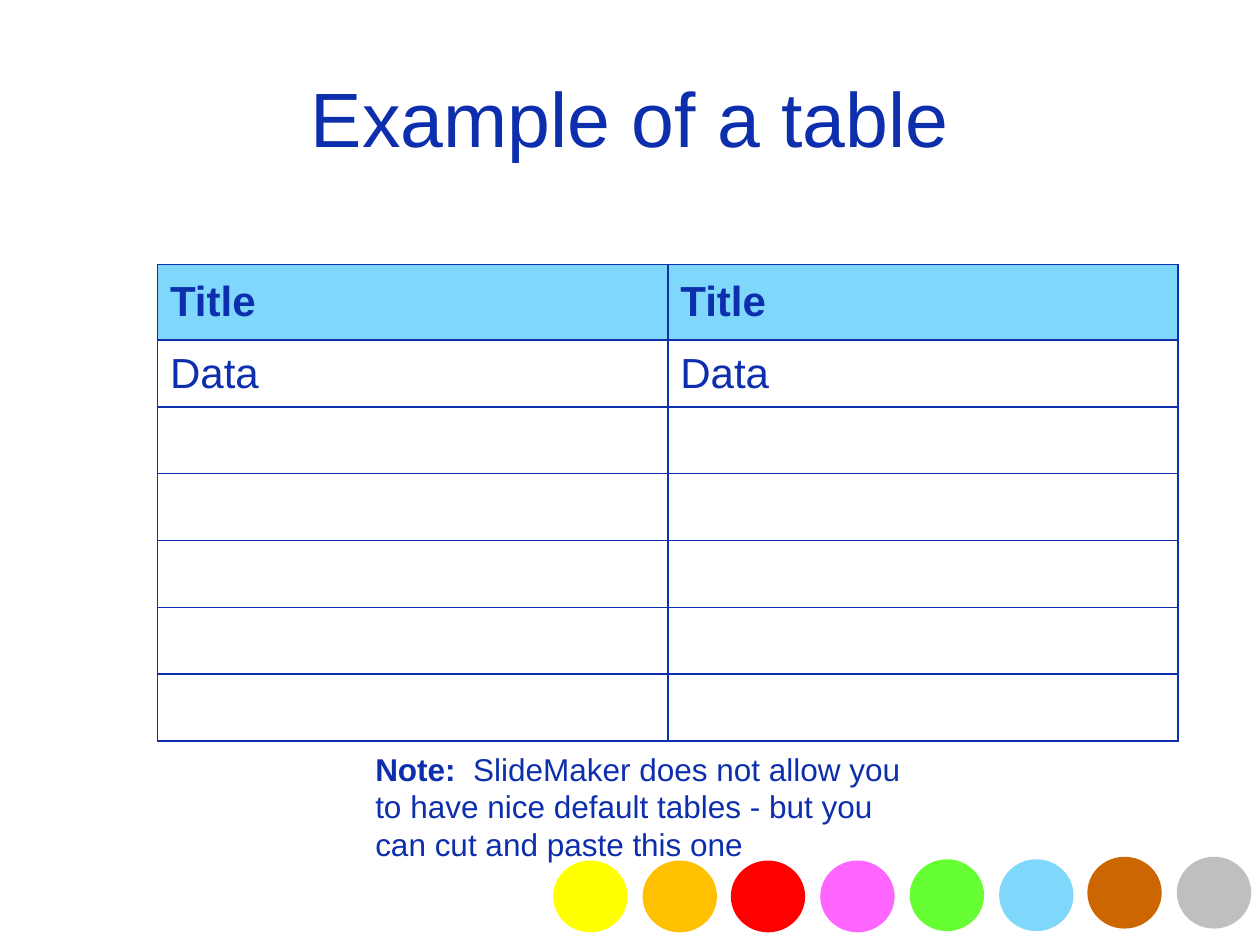
from dataclasses import dataclass

import pptx
import pptx.dml.color
import pptx.enum.shapes
import pptx.enum.text
import pptx.oxml
import pptx.oxml.ns
import pptx.util

PX = 9144
FONT = "Arial"
NAVY = "0E2FAD"
SKY = "7FD7FC"
DOT_LEFT, DOT_PITCH = 439, 70.7
ROW_HEIGHTS = [60] + [53] * 6
COLUMN_WIDTHS = [405, 405]
ROW_TEXTS = ["Title", "Data"]


@dataclass
class Box:
    left: int
    top: int
    width: int
    height: int

    def emu(self) -> list[int]:
        return [side * PX for side in (self.left, self.top, self.width, self.height)]


@dataclass
class Dot:
    color: str
    top: int


DOTS = [
    Dot("FFFF00", 683),
    Dot("FFC000", 683),
    Dot("FF0000", 683),
    Dot("FF66FF", 683),
    Dot("66FF33", 682),
    Dot(SKY, 682),
    Dot("CC6600", 680),
    Dot("BFBFBF", 680),
]


def rgb(color: str) -> pptx.dml.color.RGBColor:
    return pptx.dml.color.RGBColor.from_string(color)


def set_font(font, size: int) -> None:
    font.name = FONT
    font.size = pptx.util.Pt(size)
    font.color.rgb = rgb(NAVY)


def draw_dot(slide, dot: Dot, index: int) -> None:
    box = Box(DOT_LEFT + round(index * DOT_PITCH), dot.top, 59, 57)
    circle = slide.shapes.add_shape(pptx.enum.shapes.MSO_SHAPE.OVAL, *box.emu())
    circle.shadow.inherit = False
    circle.fill.solid()
    circle.fill.fore_color.rgb = rgb(dot.color)
    circle.line.fill.background()


def draw_title(slide) -> None:
    title = slide.shapes.title
    title.left, title.top, title.width, title.height = Box(50, 30, 900, 125).emu()
    title.text_frame.vertical_anchor = pptx.enum.text.MSO_ANCHOR.MIDDLE
    heading = title.text_frame.paragraphs[0]
    heading.text = "Example of a table"
    heading.alignment = pptx.enum.text.PP_ALIGN.CENTER
    set_font(heading.font, 44)


def add_borders(cell) -> None:
    properties = cell._tc.get_or_add_tcPr()
    for position, side in enumerate(("lnL", "lnR", "lnT", "lnB")):
        border = pptx.oxml.parse_xml(
            f'<a:{side} {pptx.oxml.ns.nsdecls("a")} w="{pptx.util.Pt(1)}">'
            f'<a:solidFill><a:srgbClr val="{NAVY}"/></a:solidFill></a:{side}>'
        )
        properties.insert(position, border)


def draw_table(slide) -> None:
    box = Box(125, 210, sum(COLUMN_WIDTHS), sum(ROW_HEIGHTS))
    table = slide.shapes.add_table(
        len(ROW_HEIGHTS), len(COLUMN_WIDTHS), *box.emu()
    ).table
    for column, width in zip(table.columns, COLUMN_WIDTHS):
        column.width = width * PX
    for index, (row, height) in enumerate(zip(table.rows, ROW_HEIGHTS)):
        row.height = height * PX
        for cell in row.cells:
            if index == 0:
                cell.fill.solid()
                cell.fill.fore_color.rgb = rgb(SKY)
            else:
                cell.fill.background()
            add_borders(cell)
            cell.vertical_anchor = pptx.enum.text.MSO_ANCHOR.MIDDLE
            if index < len(ROW_TEXTS):
                entry = cell.text_frame.paragraphs[0]
                entry.text = ROW_TEXTS[index]
                set_font(entry.font, 24)
                entry.font.bold = index == 0


def draw_note(slide) -> None:
    frame = slide.shapes.add_textbox(*Box(288, 590, 449, 100).emu()).text_frame
    frame.word_wrap = True
    note = frame.paragraphs[0]
    set_font(note.font, 18)
    label = note.add_run()
    label.text = "Note:  "
    label.font.bold = True
    note.add_run().text = (
        "SlideMaker does not allow you to have nice default tables"
        " - but you can cut and paste this one"
    )


def main() -> None:
    deck = pptx.Presentation()
    deck.slide_width, deck.slide_height = 1000 * PX, 750 * PX
    slide = deck.slides.add_slide(deck.slide_layouts.get_by_name("Title Only"))
    for index, dot in enumerate(DOTS):
        draw_dot(slide, dot, index)
    draw_title(slide)
    draw_table(slide)
    draw_note(slide)
    deck.save("out.pptx")


if __name__ == "__main__":
    main()
